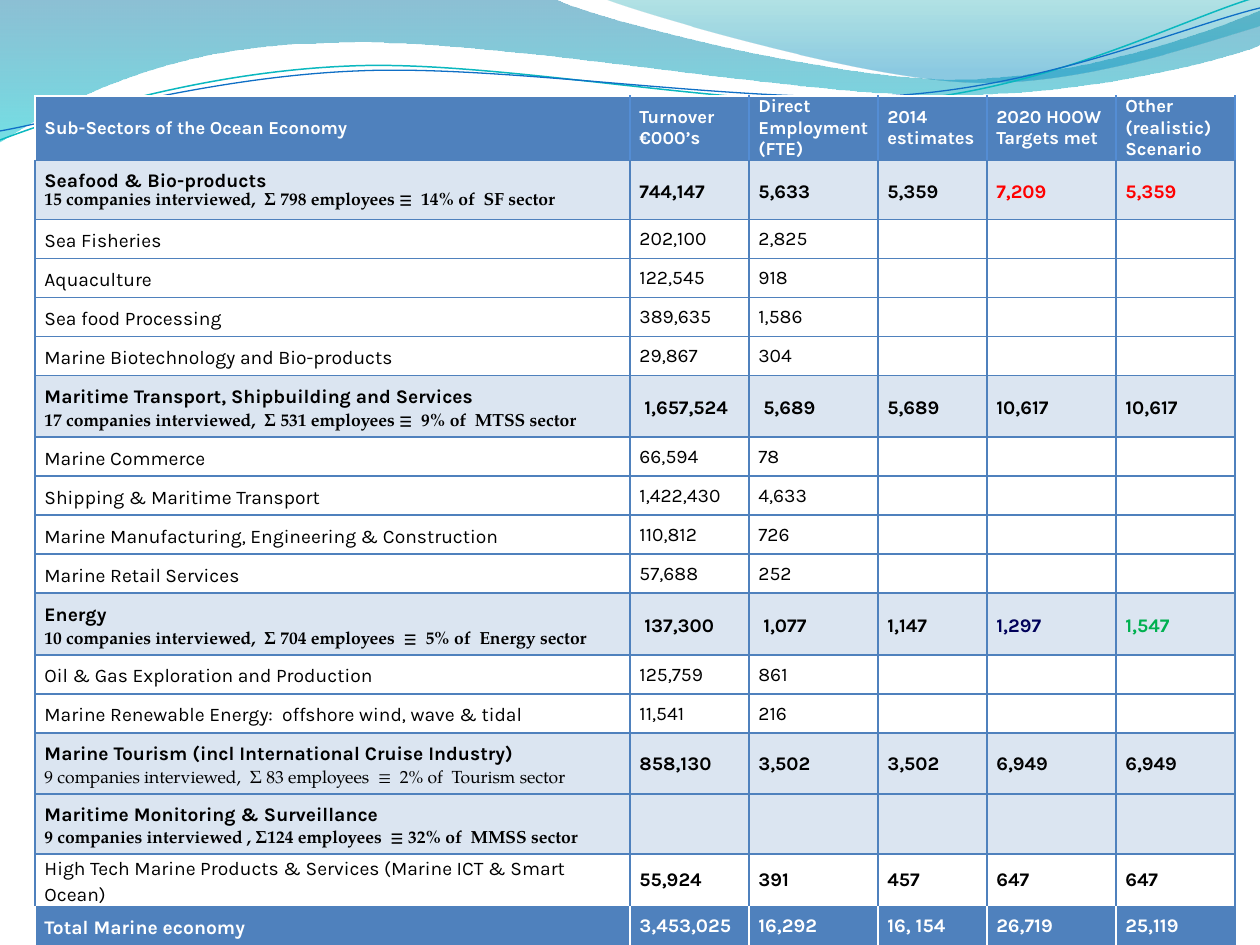
import pptx
import pptx.dml.color
import pptx.enum.text
import pptx.oxml
import pptx.oxml.ns
import pptx.util

# Content: kind of row, label, note under the label, values
ROWS = [
    ("head", "Sub-Sectors of the Ocean Economy", "",
     ["Turnover €000’s", "Direct Employment (FTE)", "2014 estimates",
      "2020 HOOW Targets met", "Other (realistic) Scenario"]),
    ("group", "Seafood & Bio-products",
     "15 companies interviewed,  Σ 798 employees ≡  14% of  SF sector",
     ["744,147", "5,633", "5,359", "7,209", "5,359"]),
    ("item", "Sea Fisheries", "", ["202,100", "2,825"]),
    ("item", "Aquaculture", "", ["122,545", "918"]),
    ("item", "Sea food Processing", "", ["389,635", "1,586"]),
    ("item", "Marine Biotechnology and Bio-products", "", ["29,867", "304"]),
    ("group", "Maritime Transport, Shipbuilding and Services",
     "17 companies interviewed,  Σ 531 employees ≡  9% of  MTSS sector",
     [" 1,657,524", " 5,689", "5,689", "10,617", "10,617"]),
    ("item", "Marine Commerce", "", ["66,594", "78"]),
    ("item", "Shipping & Maritime Transport", "", ["1,422,430", "4,633"]),
    ("item", "Marine Manufacturing, Engineering & Construction", "",
     ["110,812", "726"]),
    ("item", "Marine Retail Services", "", ["57,688", "252"]),
    ("group", "Energy",
     "10 companies interviewed,  Σ 704 employees  ≡  5% of  Energy sector",
     [" 137,300", " 1,077", "1,147", "1,297", "1,547"]),
    ("item", "Oil & Gas Exploration and Production", "", ["125,759", "861"]),
    ("item", "Marine Renewable Energy:  offshore wind, wave & tidal", "",
     ["11,541", "216"]),
    ("plain", "Marine Tourism (incl International Cruise Industry)",
     "9 companies interviewed,  Σ 83 employees  ≡  2% of  Tourism sector",
     ["858,130", "3,502", "3,502", "6,949", "6,949"]),
    ("group", "Maritime Monitoring & Surveillance",
     "9 companies interviewed , Σ124 employees  ≡ 32% of  MMSS sector", []),
    ("tech", "High Tech Marine Products & Services (Marine ICT & Smart Ocean)",
     "", ["55,924", "391", "457", "647", "647"]),
    ("total", "Total Marine economy", "",
     ["3,453,025", "16,292", "16, 154", "26,719", "25,119"]),
]
TINTS = {(1, 4): "FF0000", (1, 5): "FF0000", (11, 4): "000059", (11, 5): "00B050"}
COLS = [595, 119, 129, 109, 129, 119]
HIGHS = [49, 59] + [39] * 4 + [62] + [39] * 4 + [62, 39, 39, 61, 60, 39, 39]
LEFT, TOP = 35, 96

# Header art: start point, then lines (2 numbers) and Bezier curves (6 numbers)
FILLS = [
    ([(0, 0), (554, -1), (600, 21, 837, 79, 955, 79), (1075, 79, 1207, 33, 1260, 11),
      (1261, 45), (1239, 55, 1096, 96, 940, 95), (784, 95, 481, 35, 324, 43),
      (163, 45, 58, 105, -1, 142), (0, 0)],
     [(0, "0074A1", 45), (100, "00C6CF", 55)]),
    ([(604, -1), (641, 14, 859, 78, 969, 82), (1079, 87, 1211, 40, 1260, 26),
      (1260, 0), (604, -1)],
     [(0, "00A1A9", 30), (80, "008BBF", 45)]),
]
LINES = [
    ([(0, 140), (60, 117, 199, 72, 349, 66), (498, 59, 747, 112, 898, 101),
      (1050, 89, 1182, 19, 1257, -3)], "0AB8BF", 0.85),
    ([(0, 131), (59, 121, 207, 77, 357, 71), (508, 64, 752, 106, 903, 95),
      (1053, 84, 1186, 26, 1260, 8)], "0F6FC6", 0.75),
]

THEME = {"blue": "4F81BD", "rule": "548DD4", "pale": "DBE5F1", "white": "FFFFFF",
         "ink": "000000", "sans": "Karla", "serif": "TeX Gyre Pagella",
         "head": 10.5, "text": 11, "note": 10, "inset": 5.4}
BANDS = {"head": "blue", "total": "blue", "group": "pale", "plain": "pale"}
Pt = pptx.util.Pt


def px(n):
    return round(n * 914400 / 126)


def rgb(code):
    return pptx.dml.color.RGBColor.from_string(code)


def draw(slide, path, close):
    """Freeform through every point, its runs of three then turned into curves."""
    pts = [(px(x), px(y)) for seg in path for x, y in zip(seg[::2], seg[1::2])]
    pen = slide.shapes.build_freeform(*pts[0], scale=1.0)
    pen.add_line_segments(pts[1:], close=close)
    shape = pen.convert_to_shape()
    shape.shadow.inherit = False
    legs = iter(shape._element.findall(".//" + pptx.oxml.ns.qn("a:lnTo")))
    for seg in path[1:]:
        if len(seg) == 2:
            next(legs)
            continue
        curve = pptx.oxml.parse_xml(f'<a:cubicBezTo {pptx.oxml.ns.nsdecls("a")}/>')
        trio = [next(legs) for _ in range(3)]
        trio[0].addprevious(curve)
        for leg in trio:
            curve.append(leg[0])
            leg.getparent().remove(leg)
    return shape


def shade(shape, stops):
    """Vertical gradient with see-through stops."""
    marks = "".join(
        f'<a:gs pos="{pos * 1000}"><a:srgbClr val="{code}">'
        f'<a:alpha val="{seen * 1000}"/></a:srgbClr></a:gs>' for pos, code, seen in stops)
    fill = pptx.oxml.parse_xml(
        f'<a:gradFill {pptx.oxml.ns.nsdecls("a")}><a:gsLst>{marks}</a:gsLst>'
        '<a:lin ang="5400000" scaled="0"/></a:gradFill>')
    shape._element.spPr.insert(2, fill)
    shape.line.fill.background()


def edge(cell, codes):
    """One-point borders in the order left, right, top, bottom."""
    for side, code in zip("LRTB", codes):
        cell._tc.get_or_add_tcPr().append(pptx.oxml.parse_xml(
            f'<a:ln{side} w="12700" {pptx.oxml.ns.nsdecls("a")}><a:solidFill>'
            f'<a:srgbClr val="{THEME[code]}"/></a:solidFill></a:ln{side}>'))


def sides(kind, col):
    if kind == "head":
        return ("rule" if col else "white", "rule", "white", "blue")
    if kind == "total":
        return ("white", "blue" if col == len(COLS) - 1 else "white", "blue", "blue")
    return ("blue",) * 4


def write(para, text, tint, loose=False, **form):
    run = para.add_run()
    run.text = text
    for key, val in form.items():
        setattr(run.font, key, val)
    run.font.color.rgb = rgb(tint)
    if loose:
        para.line_spacing, para.space_after = Pt(15), Pt(3)


def fill_cell(cell, kind, row, col):
    _, label, note, vals = ROWS[row]
    for key, val in {"margin_left": Pt(THEME["inset"]), "margin_top": 0,
                     "margin_right": Pt(THEME["inset"]), "margin_bottom": 0,
                     "vertical_anchor": pptx.enum.text.MSO_ANCHOR.MIDDLE}.items():
        setattr(cell, key, val)
    edge(cell, sides(kind, col))
    if kind in BANDS:
        cell.fill.solid()
        cell.fill.fore_color.rgb = rgb(THEME[BANDS[kind]])
    else:
        cell.fill.background()
    text = ([label] + vals + [""] * len(COLS))[col]
    if not text:
        return
    ink = THEME["white" if BANDS.get(kind) == "blue" else "ink"]
    bold = kind != "item" and not (kind == "tech" and col == 0)
    loose = row > 1 if col == 0 else kind == "group"
    frame = cell.text_frame
    write(frame.paragraphs[0], text, TINTS.get((row, col), ink), loose,
          name=THEME["sans"], bold=bold,
          size=Pt(THEME["head" if kind == "head" else "text"]))
    if note and col == 0:
        write(frame.add_paragraph(), note, ink, name=THEME["serif"],
              bold=kind == "group", size=Pt(THEME["note"]))


def main():
    deck = pptx.Presentation()
    deck.slide_width, deck.slide_height = px(1260), px(945)
    slide = deck.slides.add_slide(deck.slide_layouts[6])

    # Waves
    for path, stops in FILLS:
        shade(draw(slide, path, True), stops)
    for path, code, width in LINES:
        line = draw(slide, path, False)
        line.fill.background()
        line.line.color.rgb = rgb(code)
        line.line.width = Pt(width)

    # Table
    table = slide.shapes.add_table(len(ROWS), len(COLS), px(LEFT), px(TOP),
                                   px(sum(COLS)), px(sum(HIGHS))).table
    table.horz_banding = False
    for col, wide in zip(table.columns, COLS):
        col.width = px(wide)
    for row, high in zip(table.rows, HIGHS):
        row.height = px(high)
    for r, (kind, *_) in enumerate(ROWS):
        for c in range(len(COLS)):
            fill_cell(table.cell(r, c), kind, r, c)

    deck.save("out.pptx")


if __name__ == "__main__":
    main()
